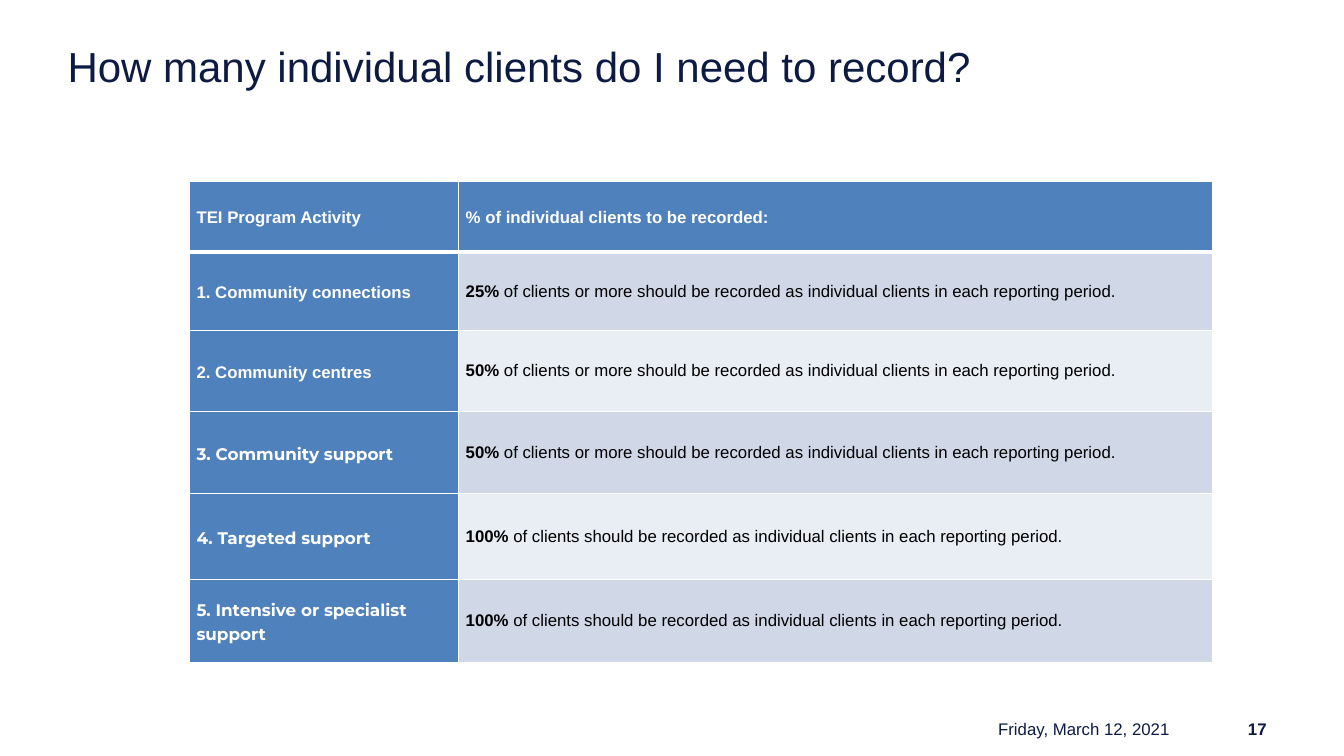
from dataclasses import dataclass

from lxml import etree
from pptx import Presentation
from pptx.dml.color import RGBColor
from pptx.enum.text import MSO_ANCHOR, PP_ALIGN
from pptx.oxml.ns import qn
from pptx.util import Inches, Length, Pt

LEFT, RIGHT = PP_ALIGN.LEFT, PP_ALIGN.RIGHT
TOP, MIDDLE = MSO_ANCHOR.TOP, MSO_ANCHOR.MIDDLE

NAVY = RGBColor(0x0D, 0x1B, 0x43)
BLUE = RGBColor(0x4F, 0x81, 0xBD)
BAND_DARK = RGBColor(0xD0, 0xD8, 0xE8)
BAND_LIGHT = RGBColor(0xE9, 0xED, 0xF4)
WHITE = RGBColor(0xFF, 0xFF, 0xFF)
BLACK = RGBColor(0x00, 0x00, 0x00)

SLIDE_WIDTH, SLIDE_HEIGHT = Inches(13.33), Inches(7.5)
COLUMN_SHARES = (20.03, 56.11)
HEADER_SHARE = 9.33
CELL_INSET = Inches(0.07)
MORE = "of clients or more should be recorded as individual clients in each reporting period."
ALL = "of clients should be recorded as individual clients in each reporting period."


@dataclass(frozen=True)
class Area:
    """A rectangle in percent of the slide's width and height."""
    left: float
    top: float
    width: float
    height: float

    def lengths(self) -> tuple[Length, Length, Length, Length]:
        return across(self.left), down(self.top), across(self.width), down(self.height)


@dataclass(frozen=True)
class Activity:
    name: str
    percentage: str
    rule: str
    height: float
    font: str = "Arial"


ACTIVITIES = (
    Activity("1. Community connections", "25%", MORE, 10.4),
    Activity("2. Community centres", "50%", MORE, 10.67),
    Activity("3. Community support", "50%", MORE, 10.93, "Montserrat"),
    Activity("4. Targeted support", "100%", ALL, 11.33, "Montserrat"),
    Activity("5. Intensive or specialist support", "100%", ALL, 10.93, "Montserrat"),
)


def across(percent: float) -> Length:
    return Length(round(SLIDE_WIDTH * percent / 100))


def down(percent: float) -> Length:
    return Length(round(SLIDE_HEIGHT * percent / 100))


def add_text(paragraph, text: str, *, size: float = 12, font: str = "Arial",
             color: RGBColor = NAVY, bold: bool = False) -> None:
    run = paragraph.add_run()
    run.text = text
    run.font.size = Pt(size)
    run.font.name = font
    run.font.color.rgb = color
    run.font.bold = bold


def add_label(slide, area: Area, text: str, *, align=LEFT, anchor=TOP,
              inset: bool = True, **text_format) -> None:
    frame = slide.shapes.add_textbox(*area.lengths()).text_frame
    frame.word_wrap = True
    frame.vertical_anchor = anchor
    if not inset:
        frame.margin_left = frame.margin_right = 0
        frame.margin_top = frame.margin_bottom = 0
    paragraph = frame.paragraphs[0]
    paragraph.alignment = align
    add_text(paragraph, text, **text_format)


def set_borders(cell, top: float, bottom: float) -> None:
    """Draw white cell borders, with widths in points."""
    properties = cell._tc.get_or_add_tcPr()
    widths = {"a:lnL": 1, "a:lnR": 1, "a:lnT": top, "a:lnB": bottom}
    for position, (tag, width) in enumerate(widths.items()):
        line = etree.Element(qn(tag), w=str(Pt(width)))
        fill = etree.SubElement(line, qn("a:solidFill"))
        etree.SubElement(fill, qn("a:srgbClr"), val=str(WHITE))
        properties.insert(position, line)


def style_cell(cell, fill: RGBColor, *, top: float = 1, bottom: float = 1):
    """Format a cell and return its paragraph."""
    cell.vertical_anchor = MIDDLE
    cell.margin_left = cell.margin_right = CELL_INSET
    cell.margin_top = cell.margin_bottom = 0
    cell.fill.solid()
    cell.fill.fore_color.rgb = fill
    set_borders(cell, top, bottom)
    return cell.text_frame.paragraphs[0]


def add_heading(paragraph, text: str, font: str = "Arial") -> None:
    paragraph.line_spacing = 1.15
    add_text(paragraph, text, font=font, color=WHITE, bold=True)


def add_activity_table(slide) -> None:
    heights = (HEADER_SHARE, *(activity.height for activity in ACTIVITIES))
    area = Area(14.1, 24, sum(COLUMN_SHARES), sum(heights))
    table = slide.shapes.add_table(len(heights), len(COLUMN_SHARES), *area.lengths()).table
    for column, share in zip(table.columns, COLUMN_SHARES):
        column.width = across(share)
    for row, share in zip(table.rows, heights):
        row.height = down(share)

    headers = ("TEI Program Activity", "% of individual clients to be recorded:")
    for column, header in enumerate(headers):
        add_heading(style_cell(table.cell(0, column), BLUE, bottom=3), header)

    for row, activity in enumerate(ACTIVITIES, start=1):
        top = 3 if row == 1 else 1
        band = BAND_DARK if row % 2 else BAND_LIGHT
        name = style_cell(table.cell(row, 0), BLUE, top=top)
        add_heading(name, activity.name, activity.font)
        requirement = style_cell(table.cell(row, 1), band, top=top)
        add_text(requirement, activity.percentage, color=BLACK, bold=True)
        add_text(requirement, f" {activity.rule}", color=BLACK)


def main() -> None:
    presentation = Presentation()
    presentation.slide_width, presentation.slide_height = SLIDE_WIDTH, SLIDE_HEIGHT
    slide = presentation.slides.add_slide(presentation.slide_layouts[6])
    add_label(slide, Area(5.03, 5.33, 90, 8.8),
              "How many individual clients do I need to record?", size=30, inset=False)
    add_label(slide, Area(86.8, 94.93, 8.18, 3.07), "17",
              align=RIGHT, anchor=MIDDLE, bold=True)
    add_label(slide, Area(64.44, 94.93, 23.33, 3.07), "Friday, March 12, 2021",
              align=RIGHT, anchor=MIDDLE)
    add_activity_table(slide)
    presentation.save("out.pptx")


if __name__ == "__main__":
    main()
